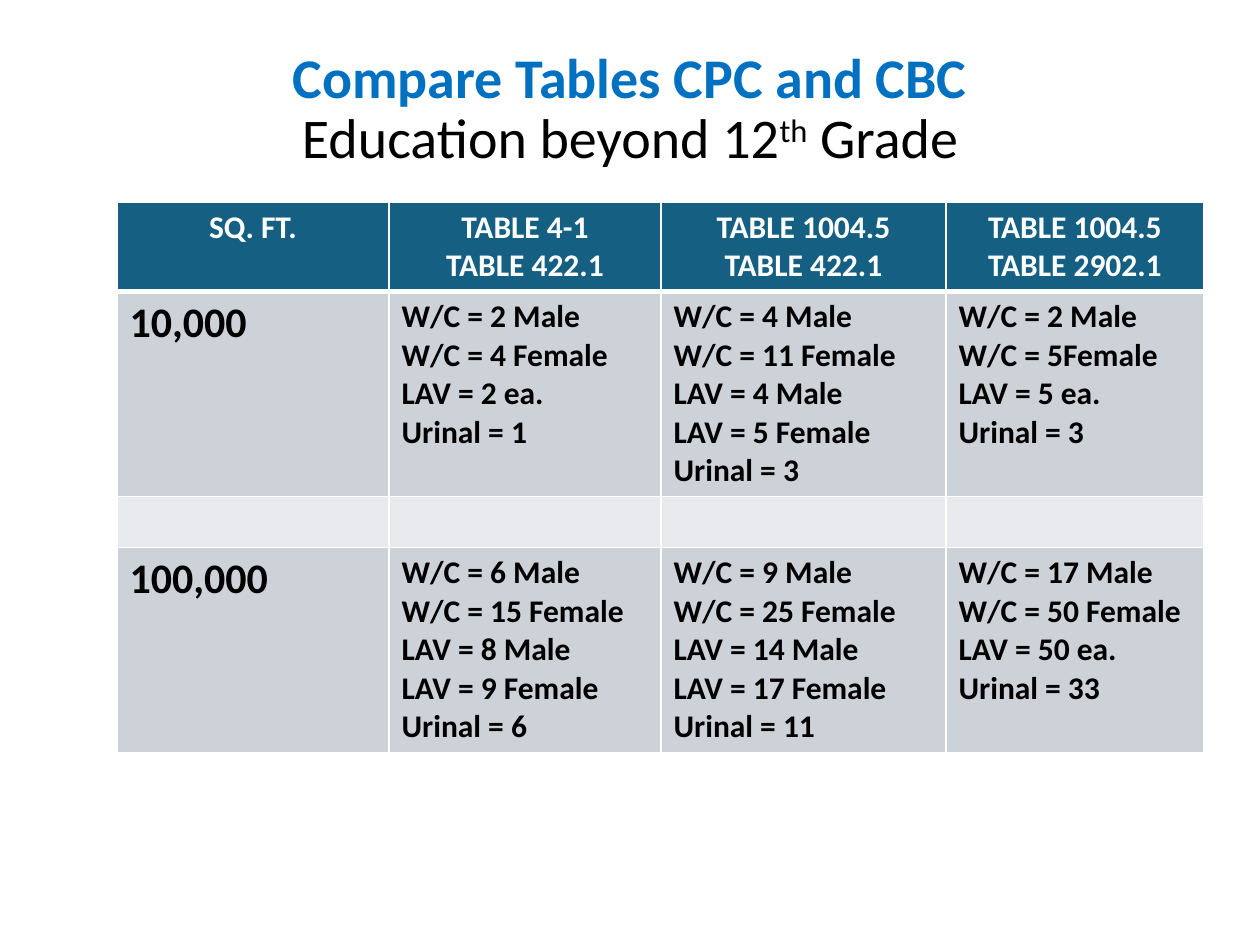
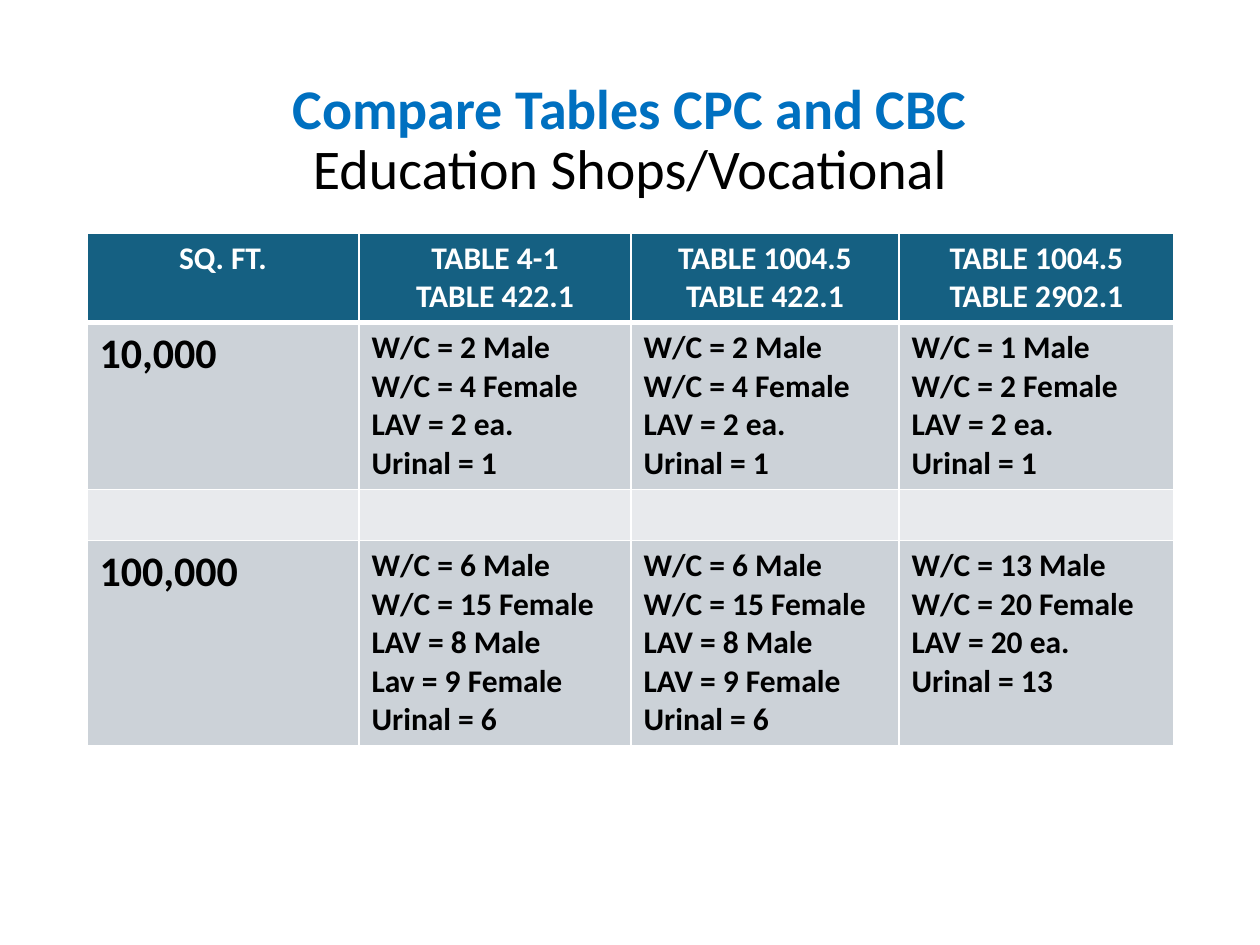
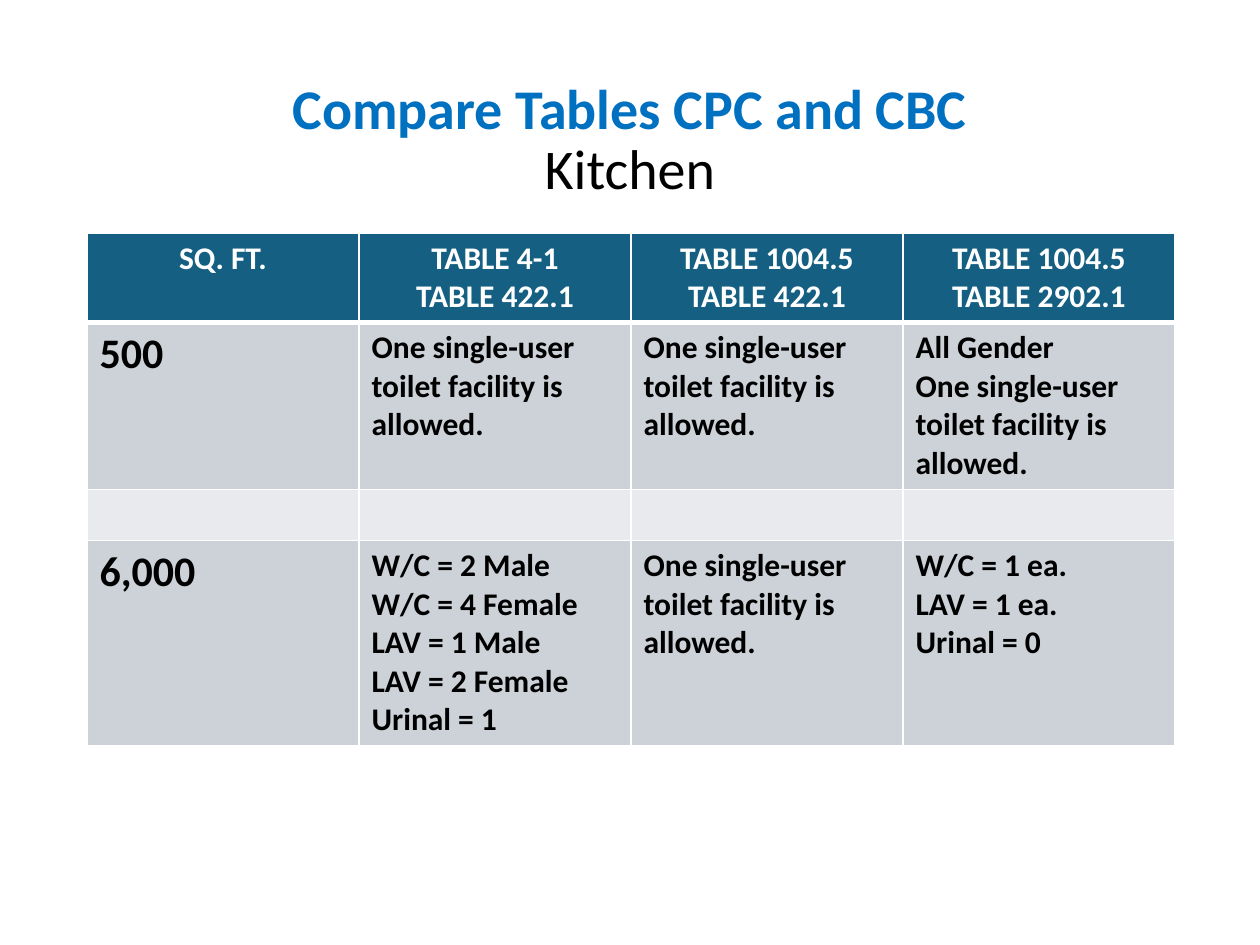
import copy
from dataclasses import dataclass

import pptx
import pptx.dml.color
import pptx.enum.text
import pptx.oxml
import pptx.oxml.ns
import pptx.util

EMU_PER_PX = 914400 / 126
SLIDE_W, SLIDE_H = 1260, 945
CENTER = pptx.enum.text.PP_ALIGN.CENTER
LEFT = pptx.enum.text.PP_ALIGN.LEFT


@dataclass(frozen=True)
class Theme:
    font: str = "Calibri"
    accent: str = "0070C0"
    ink: str = "000000"
    white: str = "FFFFFF"
    header: str = "156082"
    band: str = "CCD2D8"
    gap: str = "E8EAED"
    title_size: int = 32
    area_size: int = 24
    cell_size: int = 18
    rule: int = 1
    header_rule: int = 3


THEME = Theme()

HEADINGS = (
    ("SQ. FT.",),
    ("TABLE 4-1", "TABLE 422.1"),
    ("TABLE 1004.5", "TABLE 422.1"),
    ("TABLE 1004.5", "TABLE 2902.1"),
)
GAP_ROW = ((),) * len(HEADINGS)
SINGLE_USER = "One single-user toilet facility is allowed."
SMALL_SHOP = ("W/C = 2 Male", "W/C = 4 Female", "LAV = 2 ea.", "Urinal = 1")

# Each occupancy: subtitle runs (text, raised), title top, table left,
# column widths, row heights, and the two compared floor areas.
OCCUPANCIES = (
    dict(
        subtitle=(("Education beyond 12", False), ("th", True), (" Grade", False)),
        title_top=19, table_left=117,
        columns=(272, 272, 285, 258), rows=(89, 205, 51, 205),
        small=(
            ("10,000",),
            SMALL_SHOP,
            ("W/C = 4 Male", "W/C = 11 Female", "LAV = 4 Male", "LAV = 5 Female", "Urinal = 3"),
            ("W/C = 2 Male", "W/C = 5Female", "LAV = 5 ea.", "Urinal = 3"),
        ),
        large=(
            ("100,000",),
            ("W/C = 6 Male", "W/C = 15 Female", "LAV = 8 Male", "LAV = 9 Female", "Urinal = 6"),
            ("W/C = 9 Male", "W/C = 25 Female", "LAV = 14 Male", "LAV = 17 Female", "Urinal = 11"),
            ("W/C = 17 Male", "W/C = 50 Female", "LAV = 50 ea.", "Urinal = 33"),
        ),
    ),
    dict(
        subtitle=(("Education Shops/Vocational", False),),
        title_top=50, table_left=87,
        columns=(272, 272, 268, 275), rows=(89, 167, 51, 205),
        small=(
            ("10,000",),
            SMALL_SHOP,
            SMALL_SHOP,
            ("W/C = 1 Male", "W/C = 2 Female", "LAV = 2 ea.", "Urinal = 1"),
        ),
        large=(
            ("100,000",),
            ("W/C = 6 Male", "W/C = 15 Female", "LAV = 8 Male", "Lav = 9 Female", "Urinal = 6"),
            ("W/C = 6 Male", "W/C = 15 Female", "LAV = 8 Male", "LAV = 9 Female", "Urinal = 6"),
            ("W/C = 13 Male", "W/C = 20 Female", "LAV = 20 ea.", "Urinal = 13"),
        ),
    ),
    dict(
        subtitle=(("Kitchen", False),),
        title_top=50, table_left=87,
        columns=(272, 272, 272, 272), rows=(89, 167, 51, 205),
        small=(
            ("500",),
            (SINGLE_USER,),
            (SINGLE_USER,),
            ("All Gender", SINGLE_USER),
        ),
        large=(
            ("6,000",),
            ("W/C = 2 Male", "W/C = 4 Female", "LAV = 1 Male", "LAV = 2 Female", "Urinal = 1"),
            (SINGLE_USER,),
            ("W/C = 1 ea.", "LAV = 1 ea.", "Urinal = 0"),
        ),
    ),
)


def px(length):
    return pptx.util.Emu(round(length * EMU_PER_PX))


def rgb(value):
    return pptx.dml.color.RGBColor.from_string(value)


def add_run(paragraph, text, size, color, bold):
    run = paragraph.add_run()
    run.text = text
    run.font.name = THEME.font
    run.font.size = pptx.util.Pt(size)
    run.font.color.rgb = rgb(color)
    run.font.bold = bold
    return run


def place_title(slide, subtitle, left, top, width, height):
    title = slide.shapes.title
    title.left, title.top, title.width, title.height = map(px, (left, top, width, height))
    frame = title.text_frame
    frame.word_wrap = True
    frame.auto_size = pptx.enum.text.MSO_AUTO_SIZE.NONE
    frame.vertical_anchor = pptx.enum.text.MSO_ANCHOR.MIDDLE
    lines = frame.paragraphs[0]
    lines.alignment = CENTER
    lines.line_spacing = 0.9
    topic = add_run(lines, "Compare Tables CPC and CBC", THEME.title_size, THEME.accent, True)
    lines.add_line_break()
    # The break carries the run's size so that both lines keep the same height.
    lines._p[-1].append(copy.deepcopy(topic._r.rPr))
    for text, raised in subtitle:
        part = add_run(lines, text, THEME.title_size, THEME.ink, False)
        if raised:
            part._r.get_or_add_rPr().set("baseline", "30000")


def set_borders(cell, top, bottom):
    """Rule the cell in white; top and bottom are widths in points."""
    properties = cell._tc.get_or_add_tcPr()
    for side, width in (("L", THEME.rule), ("R", THEME.rule), ("T", top), ("B", bottom)):
        properties.append(pptx.oxml.parse_xml(
            f'<a:ln{side} {pptx.oxml.ns.nsdecls("a")} w="{pptx.util.Pt(width)}">'
            f'<a:solidFill><a:srgbClr val="{THEME.white}"/></a:solidFill></a:ln{side}>'))


def fill_cell(cell, lines, fill, size, color, alignment):
    cell.fill.solid()
    cell.fill.fore_color.rgb = rgb(fill)
    frame = cell.text_frame
    for index, line in enumerate(lines):
        paragraph = frame.add_paragraph() if index else frame.paragraphs[0]
        paragraph.alignment = alignment
        add_run(paragraph, line, size, color, True)


def place_comparison(slide, occupancy, left, top):
    columns, heights = occupancy["columns"], occupancy["rows"]
    content = (HEADINGS, occupancy["small"], GAP_ROW, occupancy["large"])
    table = slide.shapes.add_table(
        len(heights), len(columns), px(left), px(top), px(sum(columns)), px(sum(heights))).table
    for column, width in zip(table.columns, columns):
        column.width = px(width)
    for row, height in zip(table.rows, heights):
        row.height = px(height)

    fills = (THEME.header, THEME.band, THEME.gap, THEME.band)
    for r, (entries, fill) in enumerate(zip(content, fills)):
        is_header = r == 0
        for c, lines in enumerate(entries):
            cell = table.cell(r, c)
            set_borders(cell,
                        top=THEME.header_rule if r == 1 else THEME.rule,
                        bottom=THEME.header_rule if is_header else THEME.rule)
            is_area = c == 0 and not is_header
            fill_cell(cell, lines, fill,
                      size=THEME.area_size if is_area else THEME.cell_size,
                      color=THEME.white if is_header else THEME.ink,
                      alignment=CENTER if is_header else LEFT)


def add_occupancy_slide(deck, occupancy):
    slide = deck.slides.add_slide(deck.slide_layouts.get_by_name("Title Only"))
    title_top, title_height = occupancy["title_top"], 183
    place_title(slide, occupancy["subtitle"], 87, title_top, 1086, title_height)
    place_comparison(slide, occupancy, occupancy["table_left"], title_top + title_height)


def main():
    deck = pptx.Presentation()
    deck.slide_width, deck.slide_height = px(SLIDE_W), px(SLIDE_H)
    for occupancy in OCCUPANCIES:
        add_occupancy_slide(deck, occupancy)
    deck.save("out.pptx")


if __name__ == "__main__":
    main()
